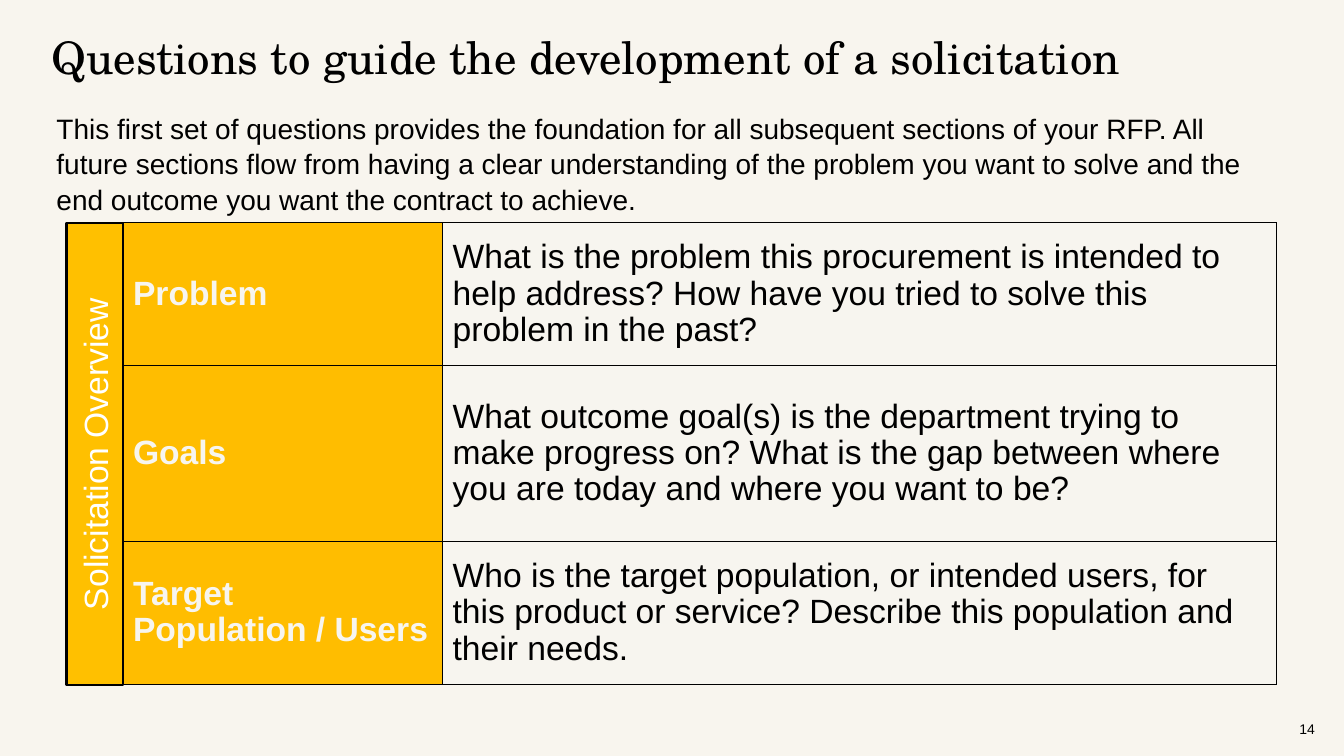
import pptx
import pptx.dml.color
import pptx.enum.shapes
import pptx.enum.text
import pptx.util
from lxml import etree
from pptx.oxml.ns import qn

SLIDE_W, SLIDE_H = 13.33, 7.5
BODY_FONT, TITLE_FONT = "Arial", "TeX Gyre Schola"
BLACK, WHITE, PAPER, CELL = "000000", "FFFFFF", "F8F5EE", "F7F5EF"
TOPIC_GOLD, BANNER_GOLD = "FFBD00", "FFC000"
MIDDLE = pptx.enum.text.MSO_ANCHOR.MIDDLE
TOP = pptx.enum.text.MSO_ANCHOR.TOP
LEFT = pptx.enum.text.PP_ALIGN.LEFT
CENTER = pptx.enum.text.PP_ALIGN.CENTER

# Grid of the question table, in inches
TABLE_LEFT, TABLE_TOP = 1.22, 2.21
COLUMNS = [3.17, 8.27]
ROWS = [1.42, 1.74, 1.42]
BANNER_W = 0.56

QUESTIONS = [
    ("Problem", "What is the problem this procurement is intended to help address? "
                "How have you tried to solve this problem in the past?"),
    ("Goals", "What outcome goal(s) is the department trying to make progress on? "
              "What is the gap between where you are today and where you want to be?"),
    ("Target Population / Users", "Who is the target population, or intended users, for this "
                                  "product or service? Describe this population and their needs."),
]


def inches(*lengths):
    return [pptx.util.Inches(length) for length in lengths]


def paint(color_holder, hex_color):
    """Give a fill or a font a solid colour."""
    if hasattr(color_holder, "solid"):
        color_holder.solid()
        color_holder = color_holder.fore_color
    else:
        color_holder = color_holder.color
    color_holder.rgb = pptx.dml.color.RGBColor.from_string(hex_color)


def write(frame, text, size, color=BLACK, font=BODY_FONT, bold=False,
          align=LEFT, anchor=MIDDLE, spacing=1.0):
    frame.text = text
    frame.word_wrap = True
    frame.vertical_anchor = anchor
    paragraph = frame.paragraphs[0]
    paragraph.alignment = align
    paragraph.line_spacing = spacing
    paragraph.space_before = pptx.util.Pt(0)
    letters = paragraph.runs[0].font
    letters.name, letters.size, letters.bold = font, pptx.util.Pt(size), bold
    paint(letters, color)
    return paragraph


def place(placeholder, left, top, width, height):
    (placeholder.left, placeholder.top,
     placeholder.width, placeholder.height) = inches(left, top, width, height)
    placeholder.text_frame.auto_size = pptx.enum.text.MSO_AUTO_SIZE.NONE
    return placeholder.text_frame


def add_heading(slide):
    title = place(slide.shapes.title, 0.41, 0.29, 12, 0.59)
    title.margin_top = 0
    write(title, "Questions to guide the development of a solicitation", 32, font=TITLE_FONT)


def add_introduction(slide):
    body = place(slide.placeholders[1], 0.46, 1.04, 12, 5.08)
    introduction = write(
        body, "This first set of questions provides the foundation for all subsequent sections "
        "of your RFP. All future sections flow from having a clear understanding of the problem "
        "you want to solve and the end outcome you want the contract to achieve.",
        20, anchor=TOP, spacing=1.05)
    introduction.space_after = pptx.util.Pt(24)
    properties = introduction._p.get_or_add_pPr()
    properties.set("marL", "0")
    properties.set("indent", "0")
    etree.SubElement(properties, qn("a:buNone"))


def border(cell):
    """Draw a thin black line on all four sides of a cell."""
    properties = cell._tc.get_or_add_tcPr()
    for position, side in enumerate(("lnL", "lnR", "lnT", "lnB")):
        line = etree.Element(qn(f"a:{side}"), w=str(pptx.util.Pt(1)))
        fill = etree.SubElement(line, qn("a:solidFill"))
        etree.SubElement(fill, qn("a:srgbClr"), val=BLACK)
        properties.insert(position, line)


def add_question_table(slide):
    frame = slide.shapes.add_table(
        len(ROWS), len(COLUMNS), *inches(TABLE_LEFT, TABLE_TOP, sum(COLUMNS), sum(ROWS)))
    table = frame.table
    table.first_row = table.horz_banding = False
    for column, width in zip(table.columns, inches(*COLUMNS)):
        column.width = width
    for row, height in zip(table.rows, inches(*ROWS)):
        row.height = height
    for row, (topic, question) in zip(table.rows, QUESTIONS):
        topic_cell, question_cell = row.cells
        for cell, text, fill, color in ((topic_cell, topic, TOPIC_GOLD, CELL),
                                        (question_cell, question, CELL, BLACK)):
            write(cell.text_frame, text, 24, color, bold=cell is topic_cell, spacing=0.97)
            cell.vertical_anchor = MIDDLE
            paint(cell.fill, fill)
            border(cell)


def add_side_banner(slide):
    # Turned on its centre so that it spans the table's height
    length = sum(ROWS) + 0.01
    center_x = TABLE_LEFT - BANNER_W / 2
    center_y = TABLE_TOP + length / 2
    banner = slide.shapes.add_shape(
        pptx.enum.shapes.MSO_SHAPE.RECTANGLE,
        *inches(center_x - length / 2, center_y - BANNER_W / 2, length, BANNER_W))
    banner.rotation = 270
    banner.shadow.inherit = False
    paint(banner.fill, BANNER_GOLD)
    paint(banner.line.fill, BLACK)
    banner.line.width = pptx.util.Pt(1.5)
    write(banner.text_frame, "Solicitation Overview", 24, WHITE, align=CENTER)


def add_page_number(slide):
    number = slide.shapes.add_textbox(*inches(SLIDE_W - 0.54, 7.03, 0.5, 0.4))
    write(number.text_frame, "14", 10)


def main():
    deck = pptx.Presentation()
    deck.slide_width, deck.slide_height = inches(SLIDE_W, SLIDE_H)
    slide = deck.slides.add_slide(deck.slide_layouts[1])
    paint(slide.background.fill, PAPER)
    add_introduction(slide)
    add_heading(slide)
    add_question_table(slide)
    add_side_banner(slide)
    add_page_number(slide)
    deck.save("out.pptx")


if __name__ == "__main__":
    main()
